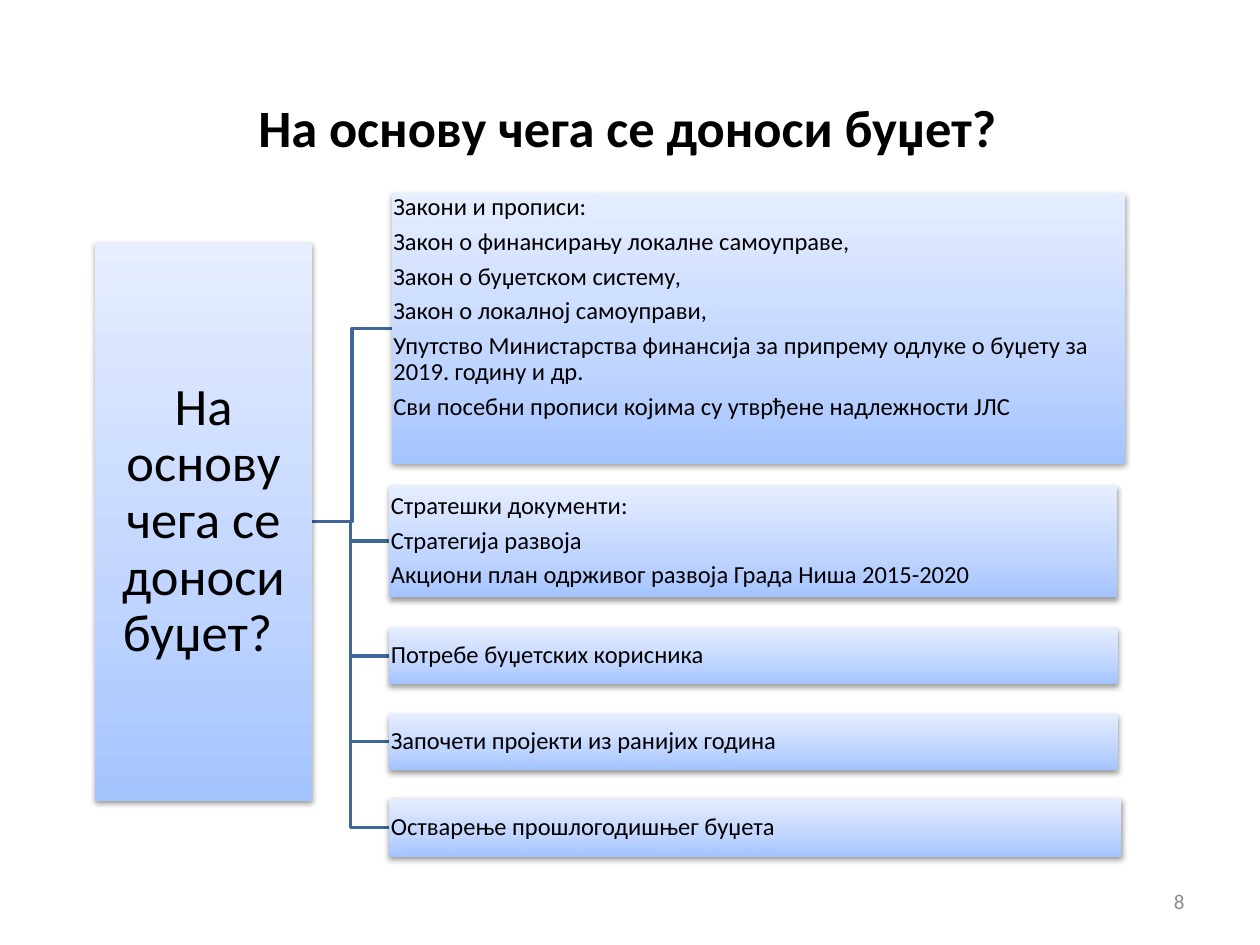
import copy
from dataclasses import dataclass

import lxml.etree
import pptx
import pptx.dml.color
import pptx.enum.shapes
import pptx.enum.text
import pptx.oxml.ns
import pptx.util

Cm, Pt = pptx.util.Cm, pptx.util.Pt
RGBColor = pptx.dml.color.RGBColor
qn = pptx.oxml.ns.qn
Align = pptx.enum.text.PP_ALIGN
Anchor = pptx.enum.text.MSO_ANCHOR

BLACK = RGBColor(0x00, 0x00, 0x00)
GREY = RGBColor(0x8C, 0x8C, 0x8C)
BRANCH_BLUE = RGBColor(0x3F, 0x67, 0x97)
PANEL_STOPS = (
    (0, RGBColor(0xA4, 0xC4, 0xFF)),
    (0.35, RGBColor(0xBF, 0xD4, 0xFF)),
    (1, RGBColor(0xE6, 0xEE, 0xFF)),
)
FONT = "Calibri"
QUESTION = "На основу чега се доноси буџет?"


@dataclass
class Panel:
    """A gradient box; lengths in centimetres, text sizes in points."""
    left: float
    top: float
    width: float
    height: float
    lines: tuple[str, ...]
    size: int = 14
    inset: float = 0.03
    align: Align = Align.LEFT
    anchor: Anchor = Anchor.MIDDLE

    @property
    def middle(self) -> float:
        return self.top + self.height / 2


ROOT = Panel(1.92, 4.89, 4.37, 11.25, (QUESTION + " ",), 30, 0.05, Align.CENTER)
BASES = (
    Panel(7.9, 3.89, 14.78, 5.46, (
        "Закони и прописи:",
        "Закон о финансирању локалне самоуправе,",
        "Закон о буџетском систему,",
        "Закон о локалној самоуправи,",
        "Упутство Министарства финансија за припрему одлуке о буџету за 2019. годину и др.",
        "Сви посебни прописи којима су утврђене надлежности ЈЛС",
    ), anchor=Anchor.TOP),
    Panel(7.85, 9.78, 14.66, 2.26, (
        "Стратешки документи:",
        "Стратегија развоја",
        "Акциони план одрживог развоја Града Ниша 2015-2020",
    )),
    Panel(7.85, 12.65, 14.68, 1.14, ("Потребе буџетских корисника",)),
    Panel(7.85, 14.38, 14.68, 1.14, ("Започети пројекти из ранијих година",)),
    Panel(7.85, 16.1, 14.76, 1.17, ("Остварење прошлогодишњег буџета",)),
)


def style(paragraph, size: int, color: RGBColor, align: Align, bold: bool = False) -> None:
    paragraph.alignment = align
    paragraph.font.name = FONT
    paragraph.font.size = Pt(size)
    paragraph.font.bold = bold
    paragraph.font.color.rgb = color


def place(shape, left: float, top: float, width: float, height: float) -> None:
    shape.left, shape.top = Cm(left), Cm(top)
    shape.width, shape.height = Cm(width), Cm(height)


def fill_gradient(shape) -> None:
    shape.fill.gradient()
    shape.fill.gradient_angle = 90
    stops = shape.element.spPr.find(".//" + qn("a:gsLst"))
    stops.insert(1, copy.deepcopy(stops[0]))
    for stop, (position, color) in zip(shape.fill.gradient_stops, PANEL_STOPS):
        stop.position = position
        stop.color.rgb = color


def cast_shadow(shape) -> None:
    shape.shadow.inherit = False
    effects = shape.element.spPr.find(qn("a:effectLst"))
    shadow = lxml.etree.SubElement(
        effects, qn("a:outerShdw"), blurRad="40000", dist="20000",
        dir="5400000", rotWithShape="0")
    color = lxml.etree.SubElement(shadow, qn("a:srgbClr"), val=str(BLACK))
    lxml.etree.SubElement(color, qn("a:alpha"), val="38000")


def draw_panel(shapes, panel: Panel) -> None:
    box = shapes.add_shape(
        pptx.enum.shapes.MSO_SHAPE.RECTANGLE,
        Cm(panel.left), Cm(panel.top), Cm(panel.width), Cm(panel.height))
    fill_gradient(box)
    box.line.fill.background()
    cast_shadow(box)
    frame = box.text_frame
    frame.word_wrap = True
    frame.vertical_anchor = panel.anchor
    frame.margin_left = frame.margin_right = Cm(panel.inset)
    frame.margin_top = frame.margin_bottom = Cm(panel.inset)
    frame.text = "\n".join(panel.lines)
    for paragraph in frame.paragraphs:
        style(paragraph, panel.size, BLACK, panel.align)
        paragraph.line_spacing = 0.9
        paragraph.space_after = Pt(4.7)


def draw_branch(shapes, root: Panel, base: Panel) -> None:
    start = root.left + root.width
    bend = (start + base.left) / 2
    builder = shapes.build_freeform(Cm(start), Cm(root.middle))
    builder.add_line_segments(
        [(Cm(bend), Cm(root.middle)), (Cm(bend), Cm(base.middle)),
         (Cm(base.left), Cm(base.middle))], close=False)
    branch = builder.convert_to_shape()
    branch.fill.background()
    branch.line.color.rgb = BRANCH_BLUE
    branch.line.width = Pt(2)
    branch.shadow.inherit = False


def main() -> None:
    deck = pptx.Presentation()
    deck.slide_width, deck.slide_height = Cm(25.4), Cm(19.05)
    slide = deck.slides.add_slide(deck.slide_layouts[5])
    shapes = slide.shapes

    title = shapes.title
    place(title, 1.22, 1.37, 22.86, 2.36)
    title.text_frame.text = QUESTION
    title.text_frame.vertical_anchor = Anchor.MIDDLE
    style(title.text_frame.paragraphs[0], 30, BLACK, Align.CENTER, bold=True)

    page_number = shapes.add_textbox(Cm(18.21), Cm(17.65), Cm(5.92), Cm(1.02))
    page_number.text_frame.word_wrap = True
    page_number.text_frame.text = "8"
    page_number.text_frame.vertical_anchor = Anchor.MIDDLE
    style(page_number.text_frame.paragraphs[0], 12, GREY, Align.RIGHT)

    for base in reversed(BASES):
        draw_branch(shapes, ROOT, base)
    for panel in (ROOT, *BASES):
        draw_panel(shapes, panel)

    deck.save("out.pptx")


if __name__ == "__main__":
    main()
